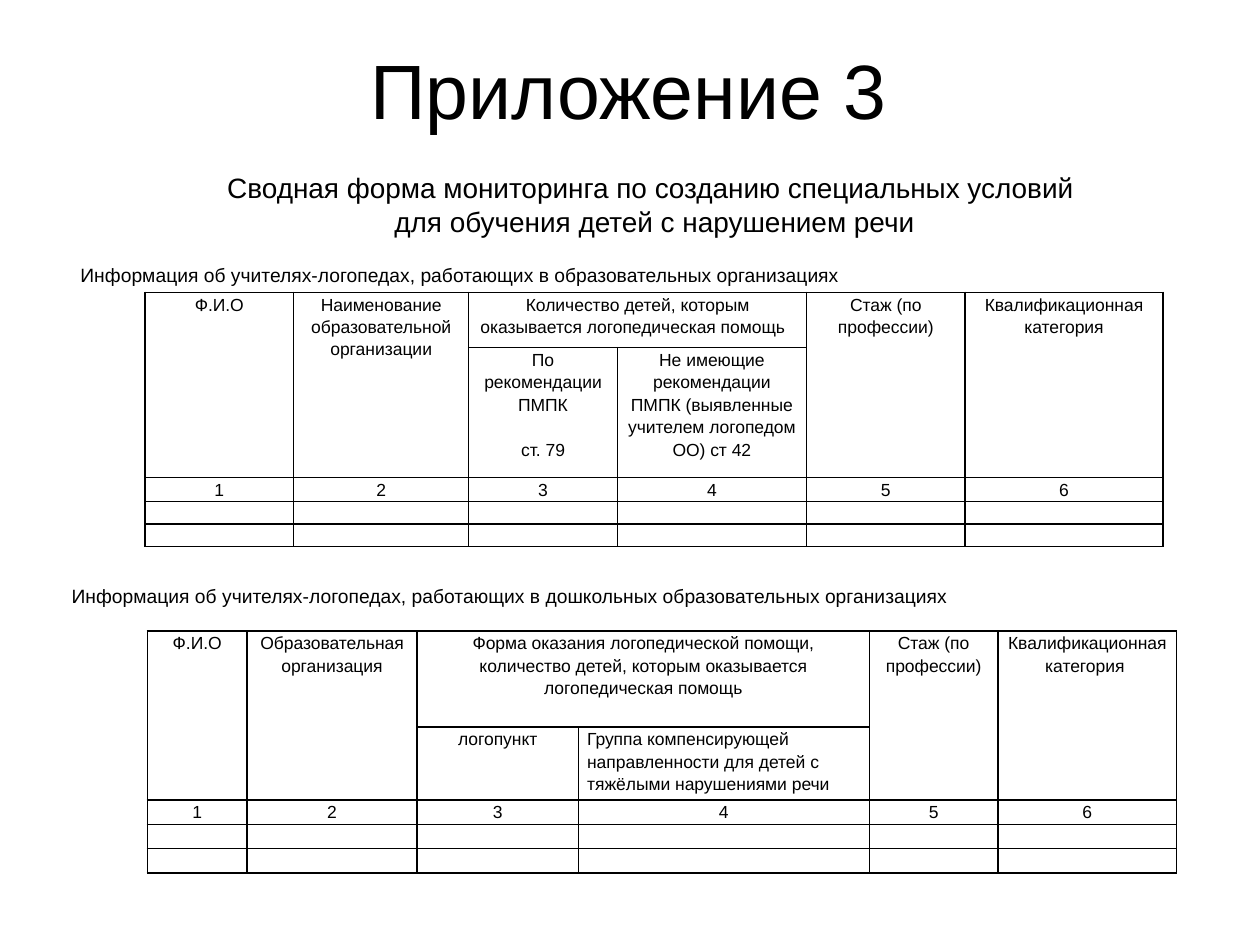
from dataclasses import dataclass

from lxml import etree
from pptx import Presentation
from pptx import util as u
from pptx.dml.color import RGBColor
from pptx.enum import text
from pptx.oxml import ns

LEFT, CENTER = text.PP_ALIGN.LEFT, text.PP_ALIGN.CENTER
TOP, MIDDLE = text.MSO_ANCHOR.TOP, text.MSO_ANCHOR.MIDDLE


@dataclass(frozen=True)
class Theme:
    font: str = "Arial"
    ink: str = "000000"
    title: int = 44
    subtitle: int = 16
    caption: int = 11
    cell: int = 10
    border: float = 1
    cell_spacing: float = 1.15
    cell_margin: float = 0.07


def write(tf, content, theme, size, align=LEFT, spacing=1.0, anchor=None, gap=0):
    """Fill a text frame, one paragraph a line; gap is the space between them."""
    tf.word_wrap = True
    if anchor is not None:
        tf.vertical_anchor = anchor
    for i, line in enumerate(content.split("\n")):
        p = tf.add_paragraph() if i else tf.paragraphs[0]
        p.alignment, p.line_spacing = align, spacing
        p.space_before = u.Pt(gap if i else 0)
        if not line:  # an empty row still takes its height from the type size
            etree.SubElement(p._p, ns.qn("a:endParaRPr"), sz=str(size * 100))
            continue
        r = p.add_run()
        r.text = line
        r.font.name, r.font.size, r.font.bold = theme.font, u.Pt(size), False
        r.font.color.rgb = RGBColor.from_string(theme.ink)


class Deck:
    """Style and current slide; positions are in a 100 by 75 grid."""
    COLS, ROWS = 100, 75

    def __init__(self, theme):
        self.theme = theme
        self.prs = Presentation()
        self.prs.slide_width, self.prs.slide_height = u.Inches(10), u.Inches(7.5)
        self.slide = self.prs.slides.add_slide(self.prs.slide_layouts[5])

    def x(self, cols):
        return round(self.prs.slide_width * cols / self.COLS)

    def y(self, rows):
        return round(self.prs.slide_height * rows / self.ROWS)

    def box(self, left, top, width, height):
        return self.x(left), self.y(top), self.x(width), self.y(height)

    def title(self, content, at):
        sp = self.slide.shapes.title
        sp.left, sp.top, sp.width, sp.height = self.box(*at)
        write(sp.text_frame, content, self.theme, self.theme.title, CENTER, anchor=MIDDLE)

    def label(self, content, at, size, **fmt):
        sp = self.slide.shapes.add_textbox(*self.box(*at))
        write(sp.text_frame, content, self.theme, size, **fmt)

    def border(self, cell):
        tc_pr = cell._tc.get_or_add_tcPr()
        for side in ("lnL", "lnR", "lnT", "lnB"):
            ln = etree.SubElement(tc_pr, ns.qn(f"a:{side}"), w=str(u.Pt(self.theme.border)))
            fill = etree.SubElement(ln, ns.qn("a:solidFill"))
            etree.SubElement(fill, ns.qn("a:srgbClr"), val=self.theme.ink)

    def table(self, left, top, widths, heights, cells, left_aligned=()):
        """Table whose third and fourth columns share a heading."""
        frame = self.slide.shapes.add_table(
            len(heights), len(widths), *self.box(left, top, sum(widths), sum(heights)))
        tbl = frame.table
        tbl.first_row = tbl.horz_banding = False
        for col, width in zip(tbl.columns, widths):
            col.width = self.x(width)
        for row, height in zip(tbl.rows, heights):
            row.height = self.y(height)
        margin = u.Inches(self.theme.cell_margin)
        for i, line in enumerate(cells):
            for j, content in enumerate(line):
                cell = tbl.cell(i, j)
                cell.margin_left = cell.margin_right = margin
                cell.margin_top = cell.margin_bottom = 0
                cell.vertical_anchor = TOP
                self.border(cell)
                cell.fill.background()
                write(cell.text_frame, content, self.theme, self.theme.cell,
                      LEFT if (i, j) in left_aligned else CENTER,
                      self.theme.cell_spacing, gap=13)
        # Headings: tall ones span two rows, the shared one spans two columns
        for j in (0, 1, 4, 5):
            tbl.cell(0, j).merge(tbl.cell(1, j))
        tbl.cell(0, 2).merge(tbl.cell(0, 3))


def form_rows(first, second, shared, sub, last):
    """Two heading rows, the row of column numbers and two rows to fill in."""
    blank = [""] * 6
    return [["Ф.И.О", first, shared, "", second, last],
            ["", "", *sub, "", ""],
            [str(n) for n in range(1, 7)], blank, blank]


def main():
    theme = Theme()
    d = Deck(theme)

    # Headings
    d.title("Приложение 3", (4.9, 0.8, 90, 12.5))
    d.label("Сводная форма мониторинга по созданию специальных условий \n"
            "для обучения детей с нарушением речи",
            (5.1, 13, 93.7, 6.4), theme.subtitle, align=CENTER, anchor=MIDDLE)

    # Schools
    d.label("Информация об учителях-логопедах, работающих в образовательных организациях",
            (5.4, 20.4, 79.7, 2.9), theme.caption)
    d.table(11.5, 23.2, [11.8, 13.9, 11.8, 15, 12.6, 15.7], [4.4, 10.3] + [1.78] * 3,
            form_rows("Наименование образовательной организации", "Стаж (по профессии)",
                      "Количество детей, которым оказывается логопедическая помощь  ",
                      ("По рекомендации ПМПК\nст. 79",
                       "Не имеющие рекомендации ПМПК (выявленные учителем логопедом ОО) ст 42"),
                      "Квалификационная категория"))

    # Preschools
    d.label("Информация об учителях-логопедах, работающих в дошкольных образовательных "
            "организациях", (4.7, 45.8, 88.6, 2.9), theme.caption, anchor=MIDDLE)
    d.table(11.7, 50.1, [7.9, 13.5, 12.8, 23.1, 10.2, 14.2], [7.6, 5.8] + [1.93] * 3,
            form_rows("Образовательная организация", "Стаж (по профессии)",
                      "Форма оказания логопедической помощи, количество детей, "
                      "которым оказывается логопедическая помощь",
                      ("логопункт", "Группа компенсирующей направленности для детей "
                                    "с тяжёлыми нарушениями речи"),
                      "Квалификационная категория "),
            left_aligned={(1, 3)})

    d.prs.save("out.pptx")


if __name__ == "__main__":
    main()
